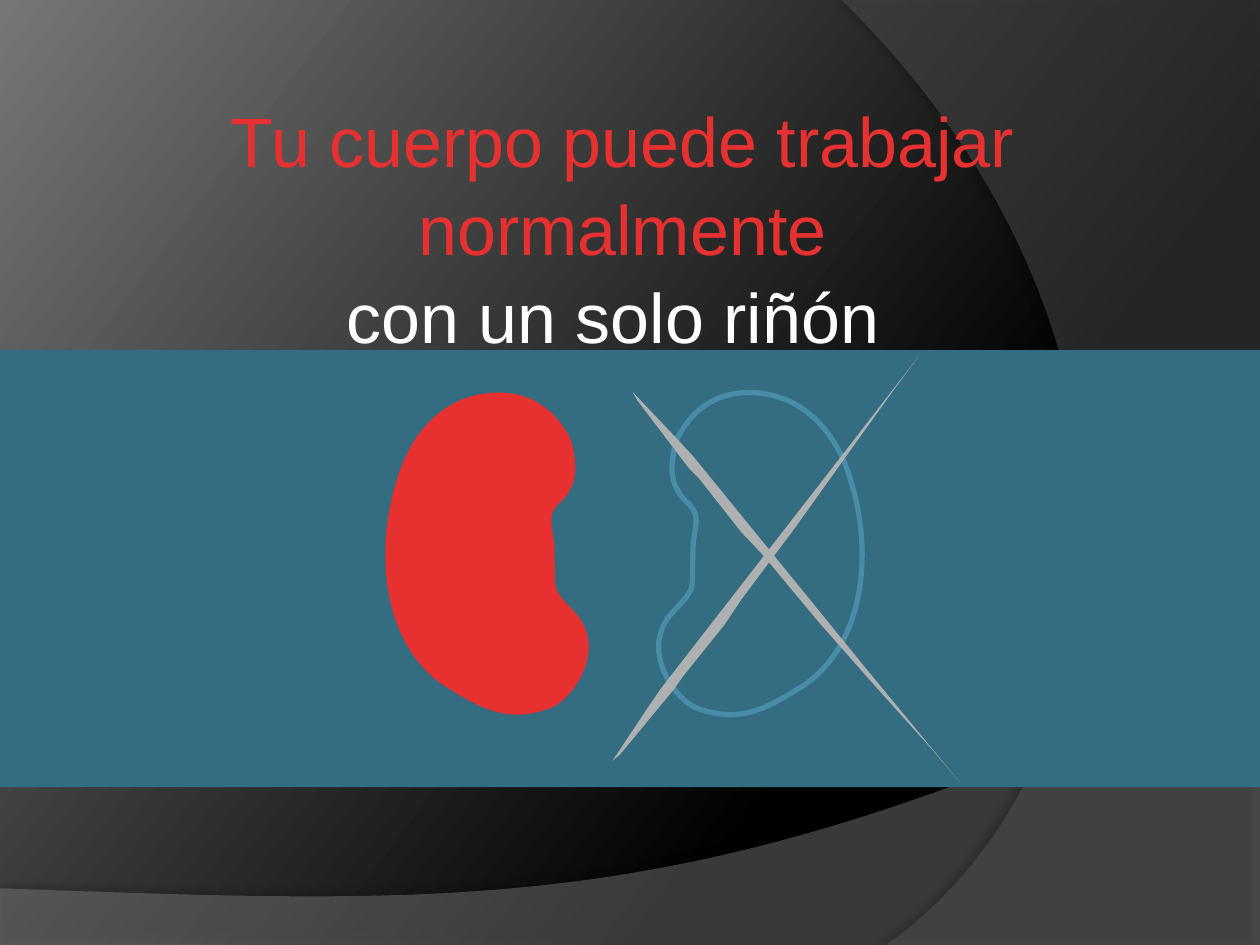
import dataclasses

import lxml.etree
import pptx
import pptx.dml.color
import pptx.enum.shapes
import pptx.enum.text
import pptx.oxml.ns
import pptx.util

Cm = pptx.util.Cm


@dataclasses.dataclass(frozen=True)
class Theme:
    font: str = "Arial"
    title_size: int = 40
    outline_width: int = 3
    red: str = "E63130"
    white: str = "FFFFFF"
    black: str = "000000"
    background_light: str = "767676"
    lower_wave: str = "7F7F7F"
    right_wave: str = "5E5E5E"
    band: str = "346C81"
    outline: str = "488CA7"
    cross: str = "AFB0B1"


theme = Theme()
color = pptx.dml.color.RGBColor.from_string
qn = pptx.oxml.ns.qn


def add_text(paragraph, text, *, size, font, fill):
    paragraph.alignment = pptx.enum.text.PP_ALIGN.CENTER
    paragraph.line_spacing = 1.05
    run = paragraph.add_run()
    run.text = text
    run.font.size = pptx.util.Pt(size)
    run.font.name = font
    run.font.color.rgb = color(fill)


def add_outline(shapes, start, segments, *, fill=None, line=None):
    ends = [segment[-2:] for segment in segments]
    builder = shapes.build_freeform(*start, scale=Cm(2.54) / 100)
    builder.add_line_segments(ends, close=True)
    shape = builder.convert_to_shape()
    left = min(x for x, y in [start, *ends])
    top = min(y for x, y in [start, *ends])
    for edge, segment in zip(list(shape.element.spPr.iter(qn("a:lnTo"))), segments):
        if len(segment) == 6:
            edge.tag = qn("a:cubicBezTo")
            for index in (0, 1):
                x, y = segment[2 * index:2 * index + 2]
                control = lxml.etree.SubElement(edge, qn("a:pt"), x=str(x - left), y=str(y - top))
                edge.insert(index, control)
    shape.shadow.inherit = False
    if fill:
        shape.fill.solid()
        shape.fill.fore_color.rgb = color(fill)
    else:
        shape.fill.background()
    if line:
        shape.line.color.rgb = color(line)
        shape.line.width = pptx.util.Pt(theme.outline_width)
    else:
        shape.line.fill.background()
    return shape


presentation = pptx.Presentation()
presentation.slide_width = Cm(25.4)
presentation.slide_height = Cm(19.05)
slide = presentation.slides.add_slide(presentation.slide_layouts[6])
shapes = slide.shapes

background = slide.background.fill
background.gradient()
background.gradient_angle = 143
for stop, position, shade in zip(background.gradient_stops, (0.3, 1),
                                 (theme.black, theme.background_light)):
    stop.position = position
    stop.color.rgb = color(shade)

waves = [
    ((0, 705), [(0, 750), (1000, 750), (1000, 520), (559, 729, 391, 719, 0, 705)],
     theme.lower_wave, 45, 35, 3.5, 270),
    ((1000, 0), [(1000, 750), (703, 750), (891, 619, 947, 275, 668, 0)],
     theme.right_wave, 40, 45, 4, 180),
]
for start, segments, fill, opacity, shadow_opacity, distance, angle in waves:
    wave = add_outline(shapes, start, segments, fill=fill)
    properties = wave.element.spPr
    wave_color = properties.find(qn("a:solidFill")).find(qn("a:srgbClr"))
    lxml.etree.SubElement(wave_color, qn("a:alpha"), val=str(opacity * 1000))
    shadow = lxml.etree.SubElement(
        properties.find(qn("a:effectLst")), qn("a:outerShdw"),
        blurRad=str(pptx.util.Pt(4)), dist=str(pptx.util.Pt(distance)),
        dir=str(angle * 60000), algn="ctr", rotWithShape="0")
    shadow_color = lxml.etree.SubElement(shadow, qn("a:srgbClr"), val=theme.black)
    lxml.etree.SubElement(shadow_color, qn("a:alpha"), val=str(shadow_opacity * 1000))

title = shapes.add_textbox(Cm(0.33), Cm(1.75), Cm(24.43), Cm(5.38)).text_frame
title.word_wrap = True
add_text(title.paragraphs[0], "Tu cuerpo puede trabajar normalmente",
         size=theme.title_size, font=theme.font, fill=theme.red)
add_text(title.add_paragraph(), "con un solo riñón ",
         size=theme.title_size, font=theme.font, fill=theme.white)

band = shapes.add_shape(pptx.enum.shapes.MSO_SHAPE.RECTANGLE,
                        0, Cm(7.06), presentation.slide_width, Cm(8.81))
band.shadow.inherit = False
band.fill.solid()
band.fill.fore_color.rgb = color(theme.band)
band.line.fill.background()

kidney_start = (440, 437)
kidney = [
    (440, 430, 439, 425, 438, 420), (438, 417, 437, 412, 438, 408),
    (439, 405, 441, 403, 443, 400), (446, 398, 448, 395, 450, 393),
    (451, 391, 453, 388, 455, 383), (455, 382, 456, 380, 456, 378),
    (458, 371, 455, 353, 452, 347), (438, 321, 419, 314, 404, 312),
    (362, 308, 333, 334, 319, 369), (293, 438, 305, 517, 357, 547),
    (387, 566, 407, 573, 437, 562), (450, 557, 470, 533, 467, 508),
    (465, 499, 462, 492, 457, 487), (453, 482, 448, 478, 444, 472),
    (439, 465, 441, 462, 440, 437),
]
mirror = 990
mirrored_kidney = [
    tuple(mirror - value if index % 2 == 0 else value for index, value in enumerate(segment))
    for segment in kidney
]
add_outline(shapes, kidney_start, kidney, fill=theme.red)
add_outline(shapes, (mirror - kidney_start[0], kidney_start[1]), mirrored_kidney,
            line=theme.outline)

cross_strokes = [
    [(537, 348), (550, 362), (686, 529), (761, 620), (739, 594), (695, 545), (650, 494),
     (605, 440), (588, 422), (555, 380), (547, 372), (506, 318), (502, 311)],
    [(514, 562), (525, 546), (657, 376), (729, 283), (709, 310), (671, 363), (631, 419),
     (589, 475), (575, 496), (542, 537), (535, 547), (492, 599), (486, 604)],
]
for start, *corners in cross_strokes:
    add_outline(shapes, start, corners, fill=theme.cross)

presentation.save("out.pptx")
